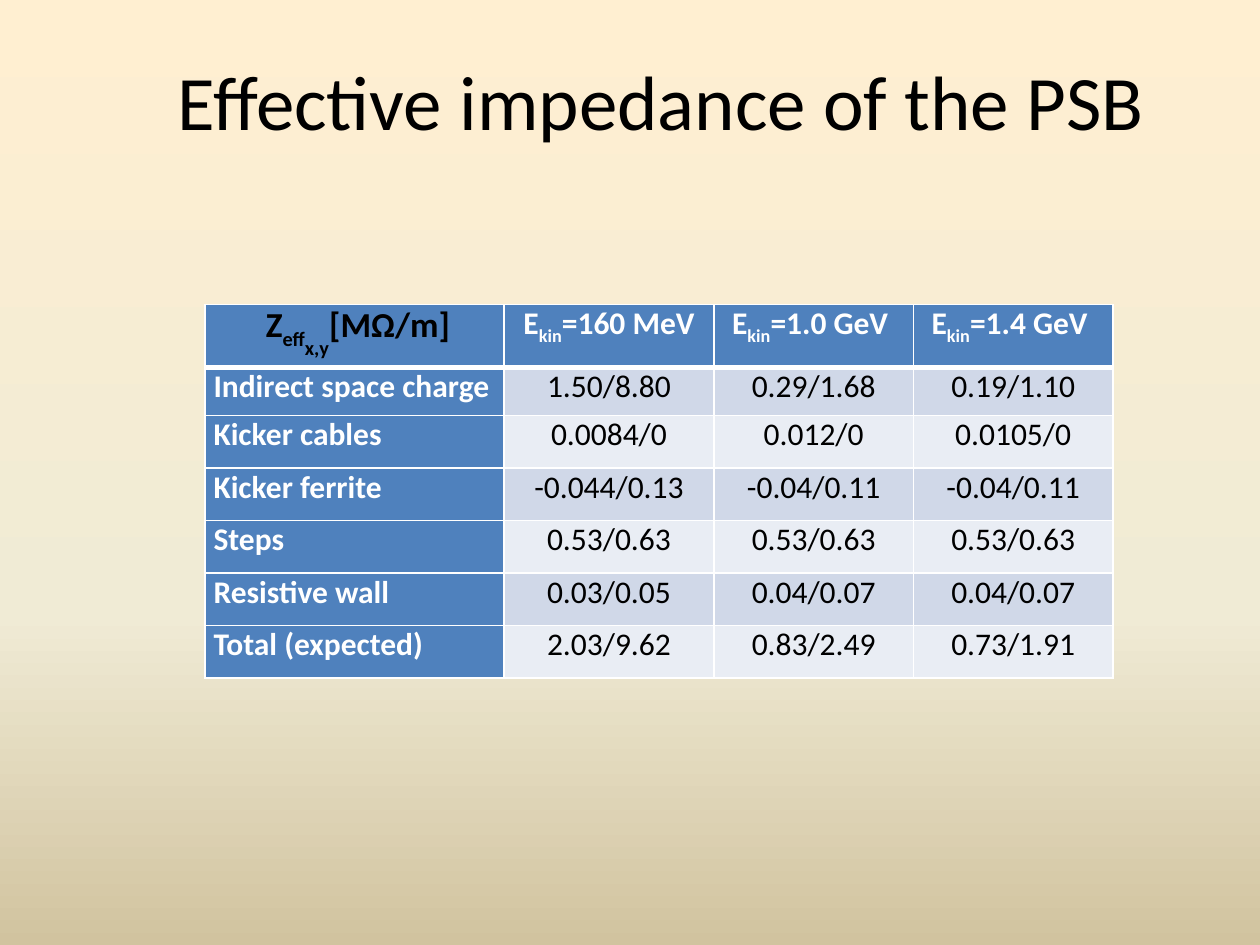
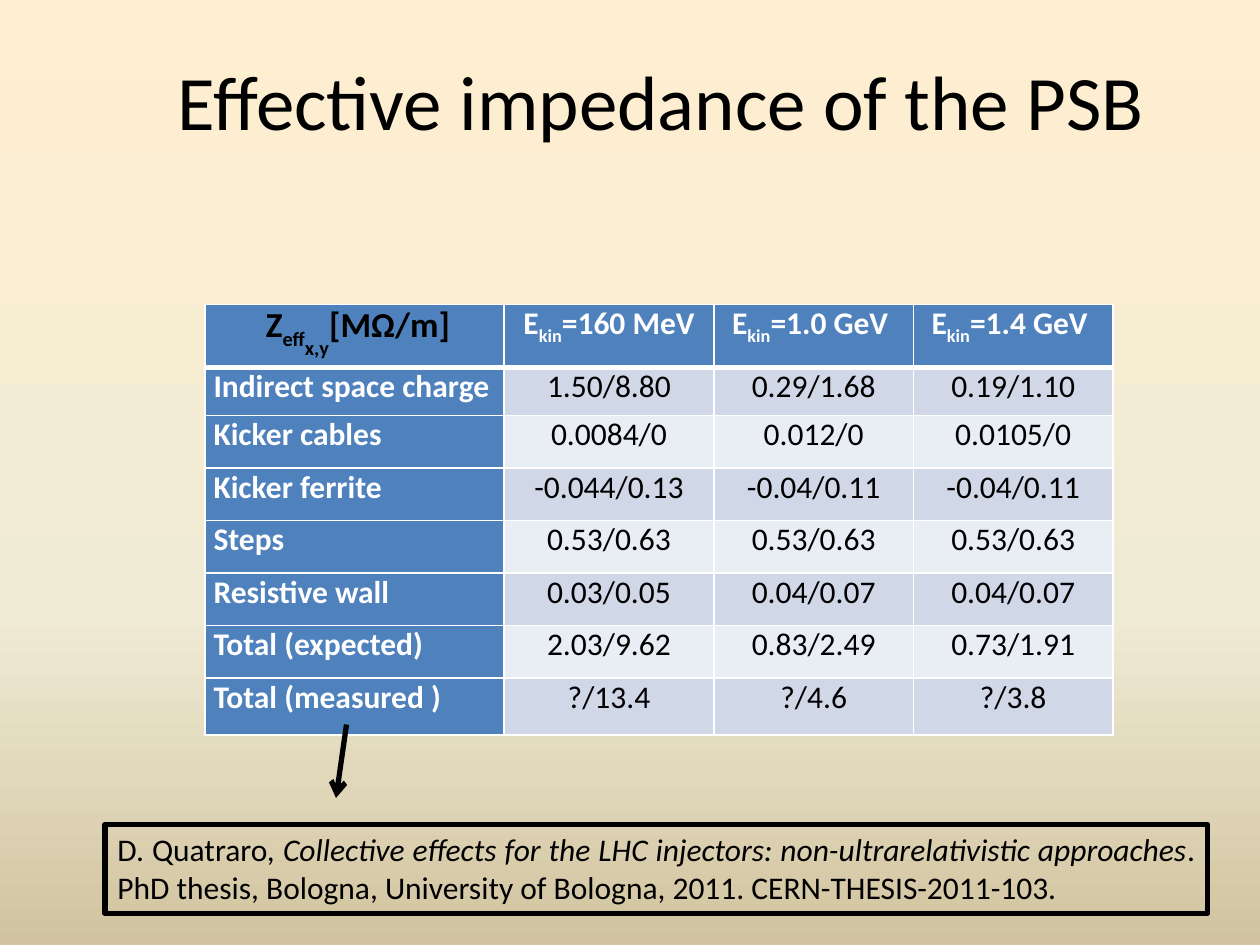
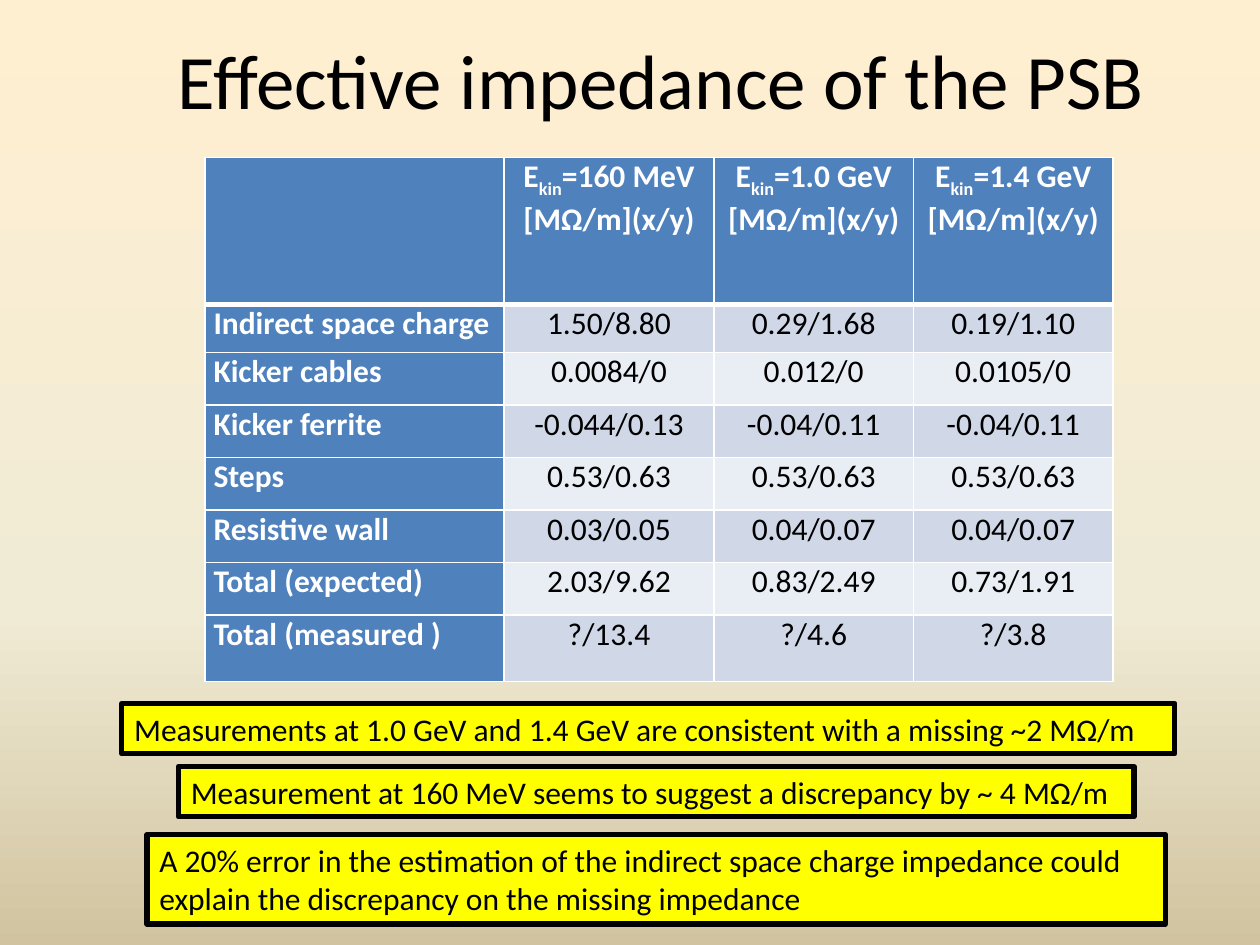
from typing import NamedTuple

from lxml.etree import SubElement as Sub
from pptx import Presentation
from pptx.dml.color import RGBColor as Rgb
from pptx.enum.shapes import MSO_CONNECTOR as Link, MSO_SHAPE as Kind
from pptx.enum.text import MSO_ANCHOR as Anchor, MSO_AUTO_SIZE as Auto, PP_ALIGN as Align
from pptx.oxml.ns import qn
from pptx.util import Emu, Inches, Pt

# Shared look
HUES = {
    "ink": "000000", "white": "FFFFFF", "head": "4F81BD",
    "odd": "D0D8E8", "even": "E9EDF4", "note": "FFFF00",
}
SKY = [(0, "FFEFD1"), (65, "F0EBD5"), (100, "D1C39F")]
FACE = "Calibri"
TITLE = "Effective impedance of the PSB"

# The slide is a grid of 120 columns by 90 rows
WIDE, HIGH = Inches(10), Inches(7.5)
COLS, ROWS = 120, 90


class Run(NamedTuple):
    text: str
    size: int = 18
    hue: str = "ink"
    bold: bool = False
    slant: bool = False
    drop: int = 0  # percent below the baseline


class Box(NamedTuple):
    left: float
    top: float
    width: float
    height: float


class Note(NamedTuple):
    box: Box
    runs: list[Run]
    fill: str | None = None
    align: Align = Align.LEFT


class Page(NamedTuple):
    title: float  # row of the title's top
    top: float  # row of the table's top
    head: list[list[Run]]
    rows: list[tuple[str, ...]]
    first: float  # height of the header row
    last: float  # height of the last row
    notes: list[Note] = []
    arrow: Box | None = None


# Table contents
COL_W = [28.5, 20, 19, 19]
DATA = [
    ("Indirect space charge", "1.50/8.80", "0.29/1.68", "0.19/1.10"),
    ("Kicker cables", "0.0084/0", "0.012/0", "0.0105/0"),
    ("Kicker ferrite", "-0.044/0.13", "-0.04/0.11", "-0.04/0.11"),
    ("Steps", "0.53/0.63", "0.53/0.63", "0.53/0.63"),
    ("Resistive wall", "0.03/0.05", "0.04/0.07", "0.04/0.07"),
    ("Total (expected)", "2.03/9.62", "0.83/2.49", "0.73/1.91"),
]
FULL = DATA + [("Total (measured )", "?/13.4", "?/4.6", "?/3.8")]


def kin(rest: str) -> list[Run]:
    """Header text for one kinetic energy."""
    return [Run("E", 18, "white", True), Run("kin", 18, "white", True, drop=25),
            Run("=" + rest, 18, "white", True)]


ZEFF = [Run(" ", 18, "white", True), Run("Z", 20, bold=True),
        Run("eff", 20, bold=True, drop=25), Run("x,y", 20, bold=True, drop=50),
        Run("[MΩ/m]", 20, bold=True)]
PLAIN = [ZEFF] + [kin(e) for e in ("160 MeV", "1.0 GeV ", "1.4 GeV ")]
UNITS = [[]] + [kin(e + " [MΩ/m](x/y)") for e in ("160 MeV", "1.0 GeV", "1.4 GeV")]

# Notes under the tables
THESIS = Note(Box(10, 78.5, 105, 8.5), [
    Run("D. Quatraro, "),
    Run("Collective effects for the LHC injectors: non-ultrarelativistic approaches",
        slant=True),
    Run(". PhD thesis, Bologna, University of Bologna, 2011. CERN-THESIS-2011-103."),
], align=Align.JUSTIFY)
FINDS = [
    Note(Box(11.6, 67, 100.3, 4.8), [Run(
        "Measurements at 1.0 GeV and 1.4 GeV are consistent with a missing ~2 MΩ/m")], "note"),
    Note(Box(17, 73, 91, 4.8), [Run(
        "Measurement at 160 MeV seems to suggest a discrepancy by ~ 4 MΩ/m")], "note"),
    Note(Box(14, 79.5, 97, 8.5), [Run(
        "A 20% error in the estimation of the indirect space charge impedance could "
        "explain the discrepancy on the missing impedance")], "note"),
]

PAGES = [
    Page(2, 29, PLAIN, DATA, 6, 5),
    Page(2, 29, PLAIN, FULL, 6, 5.4, [THESIS], Box(33, 69, -1, 7)),
    Page(0, 15, UNITS, FULL, 14, 6.3, FINDS),
]


# Helpers
def across(n: float) -> Emu:
    return Emu(round(WIDE * n / COLS))


def down(n: float) -> Emu:
    return Emu(round(HIGH * n / ROWS))


def place(box: Box) -> tuple[Emu, Emu, Emu, Emu]:
    return across(box.left), down(box.top), across(box.width), down(box.height)


def tint(name: str) -> Rgb:
    return Rgb.from_string(HUES[name])


def write(frame, runs: list[Run], align: Align) -> None:
    para = frame.paragraphs[0]
    para.alignment = align
    for item in runs:
        run = para.add_run()
        run.text = item.text
        font = run.font
        font.name, font.size = FACE, Pt(item.size)
        font.bold, font.italic = item.bold, item.slant
        font.color.rgb = tint(item.hue)
        if item.drop:
            run._r.get_or_add_rPr().set("baseline", str(-1000 * item.drop))


def edge(cell, row: int) -> None:
    """White borders, thick between the header and the body."""
    thick = {0: "lnB", 1: "lnT"}.get(row)
    props = cell._tc.get_or_add_tcPr()
    for side in ("lnL", "lnR", "lnT", "lnB"):
        line = Sub(props, qn("a:" + side), w=str(Pt(3 if side == thick else 1)))
        Sub(Sub(line, qn("a:solidFill")), qn("a:srgbClr"), val=HUES["white"])


def set_cell(cell, row: int, runs: list[Run], fill: str, align: Align) -> None:
    edge(cell, row)
    cell.fill.solid()
    cell.fill.fore_color.rgb = tint(fill)
    cell.margin_left = cell.margin_right = Inches(0.07)
    cell.margin_top = cell.margin_bottom = 0
    write(cell.text_frame, runs, align)


def add_grid(slide, page: Page) -> None:
    tall = [page.first, 4.6] + [5] * (len(page.rows) - 2) + [page.last]
    box = Box(19.5, page.top, sum(COL_W), sum(tall))
    grid = slide.shapes.add_table(len(tall), len(COL_W), *place(box)).table
    for col, width in zip(grid.columns, COL_W):
        col.width = across(width)
    for row, height in zip(grid.rows, tall):
        row.height = down(height)
    for c, runs in enumerate(page.head):
        set_cell(grid.cell(0, c), 0, runs, "head", Align.CENTER)
    for r, (label, *values) in enumerate(page.rows, 1):
        set_cell(grid.cell(r, 0), r, [Run(label, 18, "white", True)], "head", Align.JUSTIFY)
        for c, value in enumerate(values, 1):
            band = "odd" if r % 2 else "even"
            set_cell(grid.cell(r, c), r, [Run(value)], band, Align.CENTER)


def add_note(slide, note: Note) -> None:
    shape = slide.shapes.add_shape(Kind.RECTANGLE, *place(note.box))
    shape.shadow.inherit = False
    if note.fill:
        shape.fill.solid()
        shape.fill.fore_color.rgb = tint(note.fill)
    else:
        shape.fill.background()
    shape.line.color.rgb, shape.line.width = tint("ink"), Pt(3)
    frame = shape.text_frame
    frame.word_wrap, frame.auto_size = True, Auto.SHAPE_TO_FIT_TEXT
    frame.vertical_anchor = Anchor.TOP
    write(frame, note.runs, note.align)


def add_arrow(slide, box: Box) -> None:
    left, top, width, height = place(box)
    link = slide.shapes.add_connector(Link.STRAIGHT, left, top, left + width, top + height)
    link.line.color.rgb, link.line.width = tint("ink"), Pt(3)
    Sub(link.line._get_or_add_ln(), qn("a:tailEnd"), type="arrow")
    Sub(link._element.spPr, qn("a:effectLst"))


def paint(master) -> None:
    """Vertical gradient behind every slide."""
    fill = master.background.fill
    fill.gradient()
    fill.gradient_angle = 270
    stops = master.element.find(".//" + qn("a:gsLst"))
    for old in list(stops):
        stops.remove(old)
    for share, hue in SKY:
        stop = Sub(stops, qn("a:gs"), pos=str(share * 1000))
        Sub(stop, qn("a:srgbClr"), val=hue)


def add_page(deck, page: Page) -> None:
    slide = deck.slides.add_slide(deck.slide_layouts[5])
    title = slide.shapes.title
    title.left, title.top, title.width, title.height = place(Box(9, page.title, 108, 15))
    title.text_frame.vertical_anchor = Anchor.MIDDLE
    write(title.text_frame, [Run(TITLE, 44)], Align.CENTER)
    add_grid(slide, page)
    for note in page.notes:
        add_note(slide, note)
    if page.arrow:
        add_arrow(slide, page.arrow)


def main() -> None:
    deck = Presentation()
    deck.slide_width, deck.slide_height = WIDE, HIGH
    paint(deck.slide_master)
    for page in PAGES:
        add_page(deck, page)
    deck.save("out.pptx")


if __name__ == "__main__":
    main()
